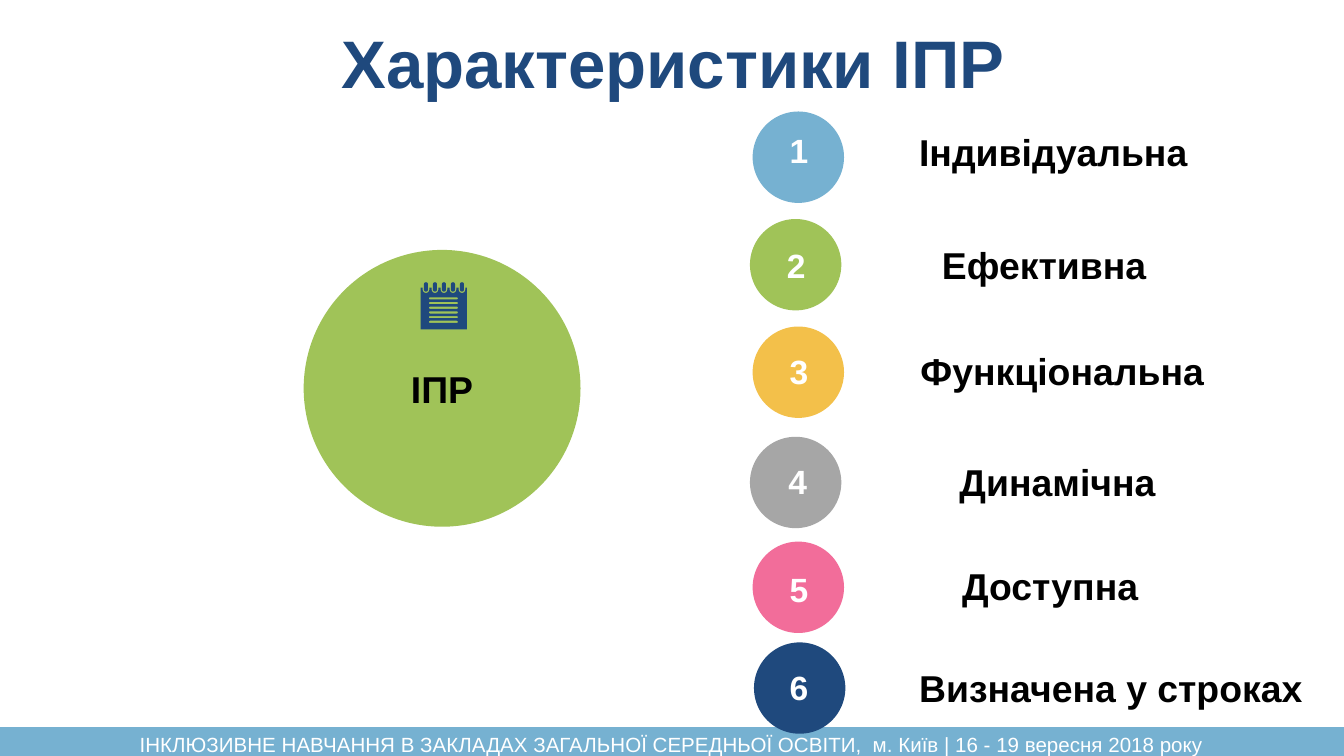
from dataclasses import dataclass
from math import cos, pi, sin

from pptx import Presentation
from pptx.dml.color import RGBColor
from pptx.enum.shapes import MSO_SHAPE
from pptx.enum.text import MSO_ANCHOR, PP_ALIGN
from pptx.util import Inches, Pt


@dataclass(frozen=True)
class Theme:
    font: str = "Arial"
    navy: str = "1F497D"
    blue: str = "76B1D1"
    green: str = "A0C358"
    yellow: str = "F3C04A"
    grey: str = "A6A6A6"
    pink: str = "F26D9A"
    black: str = "000000"
    white: str = "FFFFFF"
    title_size: int = 36
    label_size: int = 20
    number_size: int = 18
    footer_size: int = 11


THEME = Theme()
CIRCLE = 0.68

# Label, colour, circle left and top, number left and top, label left, top and width
TRAITS = [
    ("Індивідуальна", THEME.blue, 5.6, 0.83, 5.7, 0.92, 6.74, 0.91, 2.28),
    ("Ефективна", THEME.green, 5.58, 1.63, 5.68, 1.77, 6.91, 1.75, 1.95),
    ("Функціональна", THEME.yellow, 5.6, 2.43, 5.7, 2.56, 6.75, 2.54, 2.36),
    ("Динамічна", THEME.grey, 5.58, 3.25, 5.69, 3.38, 7.04, 3.37, 1.68),
    ("Доступна", THEME.pink, 5.6, 4.03, 5.7, 4.18, 7.06, 4.14, 1.53),
    ("Визначена у строках", THEME.navy, 5.61, 4.78, 5.7, 4.91, 6.74, 4.9, 3.08),
]


def paint(shape, colour):
    shape.shadow.inherit = False
    shape.fill.solid()
    shape.fill.fore_color.rgb = RGBColor.from_string(colour)
    shape.line.fill.background()


def write(shape, text, size, colour, align=PP_ALIGN.CENTER, bold=True,
          anchor=MSO_ANCHOR.MIDDLE):
    frame = shape.text_frame
    frame.word_wrap = True
    frame.vertical_anchor = anchor
    para = frame.paragraphs[0]
    para.text = text
    para.alignment = align
    para.font.name = THEME.font
    para.font.size = Pt(size)
    para.font.bold = bold
    para.font.color.rgb = RGBColor.from_string(colour)
    return para


def add_filled(page, kind, left, top, width, height, colour):
    shape = page.shapes.add_shape(
        kind, Inches(left), Inches(top), Inches(width), Inches(height))
    paint(shape, colour)
    return shape


def add_text(page, left, top, width, height, *args, **options):
    box = page.shapes.add_textbox(
        Inches(left), Inches(top), Inches(width), Inches(height))
    return write(box, *args, **options)


def arc(centre_x, centre_y, radius, start, end, steps=8):
    """Points along a circle, with angles in half turns, clockwise from right."""
    angles = [pi * (start + (end - start) * i / steps) for i in range(steps + 1)]
    return [(centre_x + radius * cos(a), centre_y + radius * sin(a)) for a in angles]


def add_notepad(page):
    """Notepad with ruled lines cut out and binding rings in the top notches."""
    ring_centres = [3.17 + 0.067 * i for i in range(5)]
    outline = [(3.13, 2.14)]
    for x in ring_centres:
        outline += [(x - 0.025, 2.14), *arc(x, 2.155, 0.025, 1, 0), (x + 0.025, 2.14)]
    outline += [(3.475, 2.14), (3.475, 2.45), (3.13, 2.45)]

    contours = [outline]
    for i in range(6):
        y = 2.22 + 0.035 * i
        contours.append(arc(3.2, y, 0.008, 1.5, 0.5) + arc(3.4, y, 0.008, 0.5, -0.5))
    for x in ring_centres:
        contours.append(arc(x, 2.115, 0.015, 1, 2) + arc(x, 2.155, 0.015, 0, 1))

    contours = [[(Inches(x), Inches(y)) for x, y in points] for points in contours]
    builder = page.shapes.build_freeform(*contours[0][0])
    builder.add_line_segments(contours[0][1:], close=True)
    for points in contours[1:]:
        builder.move_to(*points[0])
        builder.add_line_segments(points[1:], close=True)
    paint(builder.convert_to_shape(), THEME.navy)


def add_trait(page, number, trait):
    (label, colour, left, top, number_left, number_top,
     label_left, label_top, label_width) = trait
    add_filled(page, MSO_SHAPE.OVAL, left, top, CIRCLE, CIRCLE, colour)
    add_text(page, number_left, number_top, 0.49, 0.4,
             str(number), THEME.number_size, THEME.white)
    add_text(page, label_left, label_top, label_width, 0.44,
             label, THEME.label_size, THEME.black,
             align=PP_ALIGN.LEFT, anchor=MSO_ANCHOR.TOP)


def add_footer(page):
    add_filled(page, MSO_SHAPE.RECTANGLE, 0, 5.41, 10, 0.23, THEME.blue)
    para = add_text(
        page, 0, 5.37, 10, 0.3,
        "ІНКЛЮЗИВНЕ НАВЧАННЯ В ЗАКЛАДАХ ЗАГАЛЬНОЇ СЕРЕДНЬОЇ ОСВІТИ,  "
        "м. Київ | 16 - 19 вересня 2018 року",
        THEME.footer_size, THEME.white, bold=False, anchor=MSO_ANCHOR.TOP)
    para.line_spacing = 1.15
    para.space_after = Pt(10)


def main():
    deck = Presentation()
    deck.slide_width = Inches(10)
    deck.slide_height = Inches(10 * 9 / 16)
    page = deck.slides.add_slide(deck.slide_layouts[6])

    add_text(page, 2.26, 0.03, 5.5, 0.85,
             "Характеристики ІПР", THEME.title_size, THEME.navy)
    hub = add_filled(page, MSO_SHAPE.OVAL, 2.26, 1.86, 2.06, 2.06, THEME.green)
    write(hub, "ІПР", THEME.label_size, THEME.black)
    add_notepad(page)
    add_footer(page)
    for number, trait in enumerate(TRAITS, start=1):
        add_trait(page, number, trait)

    deck.save("out.pptx")


if __name__ == "__main__":
    main()
